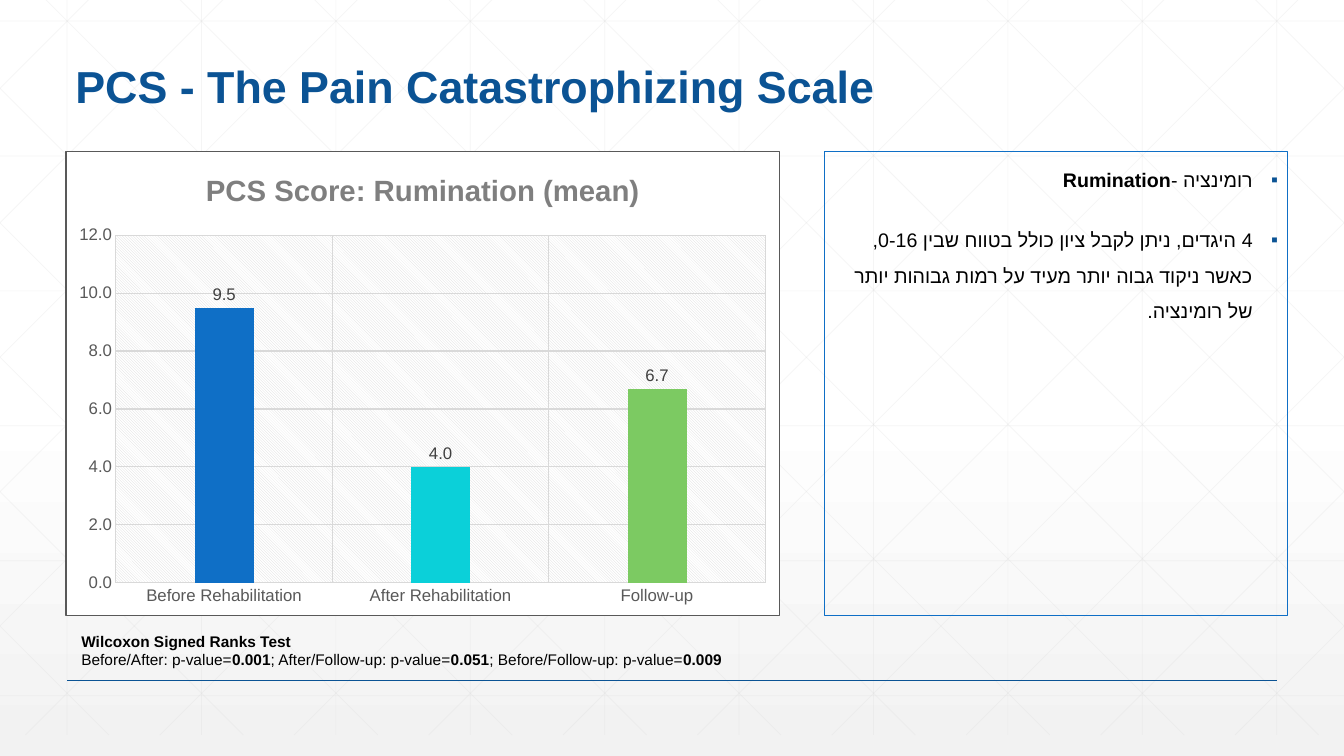
from pptx import Presentation
from pptx.chart.data import CategoryChartData
from pptx.dml.color import RGBColor
from pptx.enum.chart import XL_CHART_TYPE as ChartType, XL_LABEL_POSITION as LabelPosition
from pptx.enum.chart import XL_TICK_MARK as TickMark
from pptx.enum.shapes import MSO_CONNECTOR as Connector
from pptx.enum.text import MSO_ANCHOR as Anchor, PP_ALIGN as Align
from pptx.oxml import parse_xml
from pptx.oxml.ns import nsdecls, qn
from pptx.oxml.xmlchemy import OxmlElement
from pptx.util import Cm, Pt

WIDTH, HEIGHT = 33.87, 19.05
NAVY, PALE = "0B5394", "D9D9D9"


def rgb(color):
    return RGBColor.from_string(color)


def style(font, size, color, bold=None):
    font.name, font.size, font.bold = "Arial", Pt(size), bold
    font.color.rgb = rgb(color)


prs = Presentation()
prs.slide_width, prs.slide_height = Cm(WIDTH), Cm(HEIGHT)
slide = prs.slides.add_slide(prs.slide_layouts[6])

backdrop = slide.background.fill
backdrop.gradient()
backdrop.gradient_angle = 270
for stop, position, color in zip(backdrop.gradient_stops, (0.53, 1), ("FFFFFF", "F2F2F2")):
    stop.position = position
    stop.color.rgb = rgb(color)

# Background lattice: verticals, horizontals and mirrored diagonals
TOP, BOTTOM, STEP = -0.53, 18.52, 3.387
lattice = [(1.69 + STEP * i, TOP, 1.69 + STEP * i, BOTTOM) for i in range(10)]
lattice += [(0, 0.53 + 3.4 * i, WIDTH, 0.53 + 3.4 * i) for i in range(6)]
for i in range(-5, 10):
    start = 0.63 + STEP * i
    left, right = max(start, 0), min(start + BOTTOM - TOP, WIDTH)
    upper, lower = TOP + left - start, TOP + right - start
    lattice.append((left, upper, right, lower))
    lattice.append((WIDTH - left, upper, WIDTH - right, lower))

footer_rule = (1.69, 17.15, 32.18, 17.15)
for ends in lattice + [footer_rule]:
    line = slide.shapes.add_connector(Connector.STRAIGHT, *(Cm(value) for value in ends))
    is_rule = ends == footer_rule
    line.line.width = Pt(1 if is_rule else 0.5)
    line.line.color.rgb = rgb(NAVY if is_rule else PALE)
    if not is_rule:
        alpha = OxmlElement("a:alpha")
        alpha.set("val", "25000")
        line.line.fill._xPr.find(".//" + qn("a:srgbClr")).append(alpha)
    line._element.spPr.append(OxmlElement("a:effectLst"))

# Title
title = slide.shapes.add_textbox(Cm(1.65), Cm(1.24), Cm(26.67), Cm(1.73)).text_frame
title.word_wrap = True
title.vertical_anchor = Anchor.BOTTOM
heading = title.paragraphs[0]
heading.text = "PCS - The Pain Catastrophizing Scale"
heading.line_spacing = 0.9
style(heading.font, 32, NAVY, True)

# Explanation, right to left
panel = slide.shapes.add_textbox(Cm(20.78), Cm(3.81), Cm(11.68), Cm(11.71))
panel.line.color.rgb = rgb("0F6FC6")
panel.line.width = Pt(0.75)
explanation = panel.text_frame
explanation.word_wrap = True
points = [
    [("רומינציה -", False), ("Rumination", True)],
    [("4 היגדים, ניתן לקבל ציון כולל בטווח שבין 0-16, כאשר ניקוד גבוה יותר מעיד "
      "על רמות גבוהות יותר של רומינציה.", False)],
]
for i, parts in enumerate(points):
    point = explanation.add_paragraph() if i else explanation.paragraphs[0]
    for words, bold in parts:
        run = point.add_run()
        run.text, run.font.bold = words, bold
    point.alignment = Align.RIGHT
    point.line_spacing = 1.5
    point.space_before = Pt(18)
    props = point._p.get_or_add_pPr()
    for key, value in (("rtl", "1"), ("marL", Cm(0.64)), ("indent", Cm(-0.64))):
        props.set(key, str(value))
    for bullet in (f'<a:buClr {nsdecls("a")}><a:srgbClr val="{NAVY}"/></a:buClr>',
                   f'<a:buFont {nsdecls("a")} typeface="Arial"/>',
                   f'<a:buChar {nsdecls("a")} char="▪"/>'):
        props.append(parse_xml(bullet))
    style(point.font, 14, "000000")
    hebrew = OxmlElement("a:cs")
    hebrew.set("typeface", "Arial")
    props.find(qn("a:defRPr")).append(hebrew)

# Rumination chart
data = CategoryChartData(number_format="###0.0")
data.categories = ["Before Rehabilitation", "After Rehabilitation", "Follow-up"]
data.add_series("Series 1", (9.5, 4, 6.7))
chart = slide.shapes.add_chart(ChartType.COLUMN_CLUSTERED, Cm(1.65), Cm(3.81),
                               Cm(18.01), Cm(11.71), data).chart
chart.has_legend = False
style(chart.font, 10, "000000")
chart.has_title = True
chart_title = chart.chart_title.text_frame.paragraphs[0]
chart_title.text = "PCS Score: Rumination (mean)"
style(chart_title.runs[0].font, 21, "7F7F7F", True)
chart.chart_title.include_in_layout = False

for axis in (chart.category_axis, chart.value_axis):
    style(axis.tick_labels.font, 12, "595959")
    axis.major_tick_mark = axis.minor_tick_mark = TickMark.NONE
    axis.has_major_gridlines = True
    axis.major_gridlines.format.line.color.rgb = rgb(PALE)
    axis.major_gridlines.format.line.width = Pt(0.75)
chart.category_axis.format.line.color.rgb = rgb(PALE)
scores = chart.value_axis
scores.format.line.fill.background()
scores.minimum_scale, scores.maximum_scale, scores.major_unit = 0, 12, 2
scores.tick_labels.number_format = "###0.0"
scores.tick_labels.number_format_is_linked = False

bars = chart.plots[0]
bars.gap_width, bars.overlap, bars.vary_by_categories = 267, -43, False
for i, color in enumerate(("0F6FC6", "0BD0D9", "7CCA62")):
    fill = bars.series[0].points[i].format.fill
    fill.solid()
    fill.fore_color.rgb = rgb(color)
bars.has_data_labels = True
labels = bars.data_labels
labels.show_value = True
labels.position = LabelPosition.OUTSIDE_END
labels.number_format = "###0.0"
labels.number_format_is_linked = False
style(labels.font, 12, "404040")

# Plot position, hatched plot area, white chart area with a border
plot_area = chart._chartSpace.chart.plotArea
for default in plot_area.findall(qn("c:layout")):
    plot_area.remove(default)
plot_area.insert(0, parse_xml(
    f'<c:layout {nsdecls("c")}><c:manualLayout><c:layoutTarget val="inner"/>'
    '<c:xMode val="edge"/><c:yMode val="edge"/><c:x val="0.07"/><c:y val="0.18"/>'
    '<c:w val="0.91"/><c:h val="0.75"/></c:manualLayout></c:layout>'))
plot_area.append(parse_xml(
    f'<c:spPr {nsdecls("c", "a")}><a:pattFill prst="ltDnDiag">'
    f'<a:fgClr><a:srgbClr val="{PALE}"/></a:fgClr>'
    '<a:bgClr><a:srgbClr val="FFFFFF"/></a:bgClr></a:pattFill></c:spPr>'))
chart._chartSpace.chart.addnext(parse_xml(
    f'<c:spPr {nsdecls("c", "a")}><a:solidFill><a:srgbClr val="FFFFFF"/></a:solidFill>'
    '<a:ln w="9525"><a:solidFill><a:srgbClr val="595959"/></a:solidFill></a:ln></c:spPr>'))

# Test results below the chart
results = slide.shapes.add_textbox(Cm(1.8), Cm(15.8), Cm(16.87), Cm(1.19)).text_frame
results.word_wrap = True
result_lines = [
    [("Wilcoxon Signed Ranks Test", True)],
    [("Before/After: p-value=", False), ("0.001", True),
     ("; After/Follow-up: p-value=", False), ("0.051", True),
     ("; Before/Follow-up: p-value=", False), ("0.009", True)],
]
for i, parts in enumerate(result_lines):
    result = results.add_paragraph() if i else results.paragraphs[0]
    for words, bold in parts:
        run = result.add_run()
        run.text, run.font.bold = words, bold
    style(result.font, 11, "000000")

prs.save("out.pptx")
